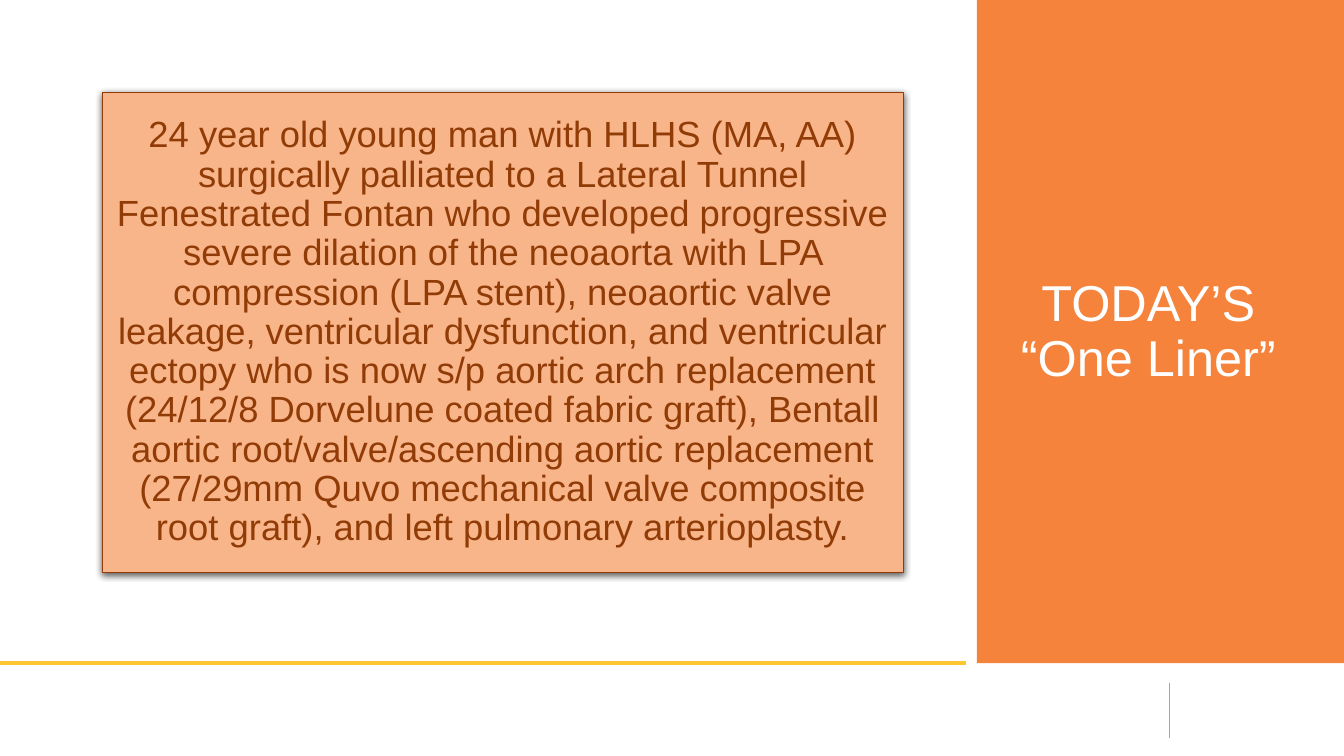
from lxml import etree
from pptx import Presentation
from pptx.dml.color import RGBColor
from pptx.enum.shapes import MSO_CONNECTOR, MSO_SHAPE
from pptx.enum.text import MSO_ANCHOR, MSO_AUTO_SIZE, PP_ALIGN
from pptx.oxml import parse_xml
from pptx.oxml.ns import nsdecls, qn
from pptx.util import Inches, Pt

WIDTH, HEIGHT = 13.33, 7.5
PANEL_LEFT, FOOTER_TOP = 9.69, 6.58
ORANGE, PEACH, BROWN = "F5833C", "F9B58A", "913C07"
YELLOW, GREY, WHITE = "FFC632", "A6A6A6", "FFFFFF"

HEADING = "TODAY’S “One Liner”"
SUMMARY = (
    "24 year old young man with HLHS (MA, AA) surgically palliated to "
    "a Lateral Tunnel Fenestrated Fontan who developed progressive severe "
    "dilation of the neoaorta with LPA compression (LPA stent), neoaortic valve "
    "leakage, ventricular dysfunction, and ventricular ectopy who is now s/p "
    "aortic arch replacement (24/12/8 Dorvelune coated fabric graft), Bentall "
    "aortic root/valve/ascending aortic replacement (27/29mm Quvo mechanical "
    "valve composite root graft), and left pulmonary arterioplasty."
)


def color(hex_code):
    return RGBColor.from_string(hex_code)


def add_rectangle(slide, box, fill):
    rectangle = slide.shapes.add_shape(MSO_SHAPE.RECTANGLE, *map(Inches, box))
    rectangle.shadow.inherit = False
    rectangle.fill.solid()
    rectangle.fill.fore_color.rgb = color(fill)
    rectangle.line.fill.background()
    return rectangle


def add_rule(slide, start, end, line_color, points):
    rule = slide.shapes.add_connector(
        MSO_CONNECTOR.STRAIGHT, *map(Inches, start + end))
    rule.line.color.rgb = color(line_color)
    rule.line.width = Pt(points)
    etree.SubElement(rule.element.spPr, qn("a:effectLst"))


def write_centred(frame, text, size, text_color, margins):
    frame.word_wrap = True
    frame.auto_size = MSO_AUTO_SIZE.NONE
    frame.vertical_anchor = MSO_ANCHOR.MIDDLE
    frame.margin_left = frame.margin_right = Inches(margins[0])
    frame.margin_top = frame.margin_bottom = Inches(margins[1])
    paragraph = frame.paragraphs[0]
    paragraph.alignment = PP_ALIGN.CENTER
    paragraph.line_spacing = 0.9
    run = paragraph.add_run()
    run.text = text
    run.font.name = "Arial"
    run.font.size = Pt(size)
    run.font.color.rgb = color(text_color)
    return paragraph


def add_heading_panel(slide, box):
    left, top, width, height = box
    panel = add_rectangle(slide, box, ORANGE)
    title = slide.shapes.title
    title.element.addprevious(panel.element)  # keeps the title in front
    title.left, title.top = Inches(left + 0.31), Inches(top + 0.62)
    title.width, title.height = Inches(width - 0.86), Inches(height - 1.22)
    paragraph = write_centred(title.text_frame, HEADING, 36, WHITE, (0.1, 0.05))
    paragraph.space_before = Pt(10)


def add_summary_card(slide, box):
    card = add_rectangle(slide, box, PEACH)
    card.line.color.rgb = color(BROWN)
    card.line.width = Pt(0.75)
    shadow = parse_xml(
        f'<a:outerShdw {nsdecls("a")} blurRad="{Pt(4.5)}" dist="{Pt(1.5)}" '
        'dir="5400000" algn="ctr" rotWithShape="0"><a:srgbClr val="000000">'
        '<a:alpha val="63000"/></a:srgbClr></a:outerShdw>')
    card.element.spPr.find(qn("a:effectLst")).append(shadow)
    write_centred(card.text_frame, SUMMARY, 26, BROWN, (0.11, 0.11))


def add_footer_rules(slide, top):
    add_rule(slide, (0, top), (PANEL_LEFT - 0.11, top), YELLOW, 3)
    divider = WIDTH * 0.87
    add_rule(slide, (divider, top + 0.2), (divider, top + 0.74), GREY, 1)


def main():
    deck = Presentation()
    deck.slide_width, deck.slide_height = Inches(WIDTH), Inches(HEIGHT)
    title_only = deck.slide_layouts[5]
    slide = deck.slides.add_slide(title_only)
    add_heading_panel(slide, (PANEL_LEFT, 0, WIDTH - PANEL_LEFT, FOOTER_TOP))
    add_footer_rules(slide, FOOTER_TOP)
    add_summary_card(slide, (1.02, 0.92, 7.94, 4.76))
    deck.save("out.pptx")


if __name__ == "__main__":
    main()
